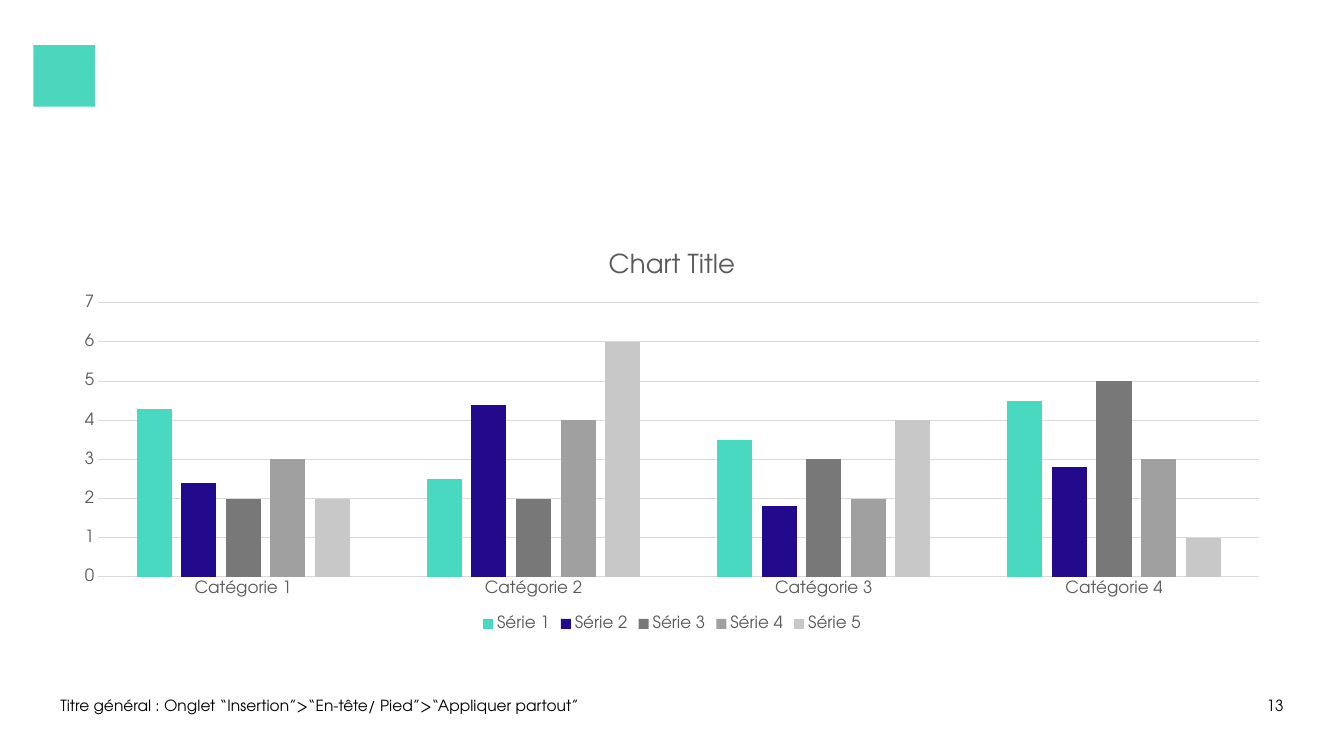
from dataclasses import dataclass

from pptx import Presentation
from pptx.chart.data import CategoryChartData
from pptx.dml.color import RGBColor
from pptx.enum.chart import XL_CHART_TYPE, XL_LEGEND_POSITION, XL_TICK_MARK
from pptx.enum.shapes import MSO_SHAPE
from pptx.enum.text import MSO_ANCHOR, PP_ALIGN
from pptx.util import Cm, Pt

COLUMNS = XL_CHART_TYPE.COLUMN_CLUSTERED
LEGEND_BOTTOM = XL_LEGEND_POSITION.BOTTOM
NO_TICK = XL_TICK_MARK.NONE
SQUARE = MSO_SHAPE.RECTANGLE
ANCHOR_BOTTOM = MSO_ANCHOR.BOTTOM
LEFT, RIGHT = PP_ALIGN.LEFT, PP_ALIGN.RIGHT


@dataclass(frozen=True)
class Theme:
    font: str = "TeX Gyre Adventor"
    text: str = "000000"
    chart_text: str = "595959"
    rule: str = "D9D9D9"
    emblem: str = "4BD7BE"
    footer_size: float = 11
    title_size: float = 18.6
    label_size: float = 12
    rule_width: float = 0.75


THEME = Theme()

CHART_TITLE = "Chart Title"
CATEGORIES = ["Catégorie 1", "Catégorie 2", "Catégorie 3", "Catégorie 4"]
SERIES = [
    ("Série 1", (4.3, 2.5, 3.5, 4.5), "49D9C0"),
    ("Série 2", (2.4, 4.4, 1.8, 2.8), "230A8C"),
    ("Série 3", (2, 2, 3, 5), "787878"),
    ("Série 4", (3, 4, 2, 3), "A0A0A0"),
    ("Série 5", (2, 6, 4, 1), "C8C8C8"),
]
FOOTER = "Titre général : Onglet “Insertion”>“En-tête/ Pied”>“Appliquer partout”"
PAGE_NUMBER = "13"

PAGE_WIDTH, PAGE_HEIGHT = 33.87, 19.05
MARGIN = 1.52
CONTENT_WIDTH = PAGE_WIDTH - 2 * MARGIN
CHART_TOP, CHART_HEIGHT = 5.89, 10.13
FOOTER_BOTTOM = 18.02
FOOTER_WIDTH, FOOTER_HEIGHT = 13.41, 1.09
NUMBER_WIDTH, NUMBER_HEIGHT = 2.01, 0.61
EMBLEM_LEFT, EMBLEM_TOP, EMBLEM_SIZE = 0.84, 1.14, 1.55


def style_font(font, size, color):
    font.name = THEME.font
    font.size = Pt(size)
    font.bold = False
    font.color.rgb = RGBColor.from_string(color)


def style_rule(line):
    line.color.rgb = RGBColor.from_string(THEME.rule)
    line.width = Pt(THEME.rule_width)


def add_footer_text(page, text, left, width, height, alignment):
    top = FOOTER_BOTTOM - height
    box = page.shapes.add_textbox(Cm(left), Cm(top), Cm(width), Cm(height))
    frame = box.text_frame
    frame.word_wrap = True
    frame.vertical_anchor = ANCHOR_BOTTOM
    frame.margin_left = frame.margin_right = 0
    frame.margin_top = frame.margin_bottom = 0
    para = frame.paragraphs[0]
    para.alignment = alignment
    span = para.add_run()
    span.text = text
    style_font(span.font, THEME.footer_size, THEME.text)


def add_emblem(page):
    emblem = page.shapes.add_shape(
        SQUARE, Cm(EMBLEM_LEFT), Cm(EMBLEM_TOP), Cm(EMBLEM_SIZE), Cm(EMBLEM_SIZE)
    )
    emblem.shadow.inherit = False
    emblem.fill.solid()
    emblem.fill.fore_color.rgb = RGBColor.from_string(THEME.emblem)
    emblem.line.fill.background()


def add_column_chart(page):
    data = CategoryChartData()
    data.categories = CATEGORIES
    for name, values, _ in SERIES:
        data.add_series(name, values)
    chart = page.shapes.add_chart(
        COLUMNS, Cm(MARGIN), Cm(CHART_TOP), Cm(CONTENT_WIDTH), Cm(CHART_HEIGHT), data
    ).chart
    style_font(chart.font, THEME.label_size, THEME.chart_text)

    chart.has_title = True
    span = chart.chart_title.text_frame.paragraphs[0].add_run()
    span.text = CHART_TITLE
    style_font(span.font, THEME.title_size, THEME.chart_text)
    chart.chart_title.include_in_layout = False

    chart.has_legend = True
    chart.legend.position = LEGEND_BOTTOM
    chart.legend.include_in_layout = False
    style_font(chart.legend.font, THEME.label_size, THEME.chart_text)

    for axis in (chart.category_axis, chart.value_axis):
        axis.major_tick_mark = axis.minor_tick_mark = NO_TICK
        style_font(axis.tick_labels.font, THEME.label_size, THEME.chart_text)
    style_rule(chart.category_axis.format.line)
    value_axis = chart.value_axis
    value_axis.minimum_scale, value_axis.maximum_scale = 0, 7
    value_axis.major_unit = 1
    value_axis.format.line.fill.background()
    style_rule(value_axis.major_gridlines.format.line)

    plot = chart.plots[0]
    plot.gap_width, plot.overlap = 219, -27
    plot.vary_by_categories = False
    for series, (_, _, color) in zip(plot.series, SERIES):
        series.format.fill.solid()
        series.format.fill.fore_color.rgb = RGBColor.from_string(color)


def main():
    deck = Presentation()
    deck.slide_width, deck.slide_height = Cm(PAGE_WIDTH), Cm(PAGE_HEIGHT)
    page = deck.slides.add_slide(deck.slide_layouts[6])
    add_emblem(page)
    add_footer_text(page, FOOTER, MARGIN, FOOTER_WIDTH, FOOTER_HEIGHT, LEFT)
    number_left = PAGE_WIDTH - MARGIN - NUMBER_WIDTH
    add_footer_text(page, PAGE_NUMBER, number_left, NUMBER_WIDTH, NUMBER_HEIGHT, RIGHT)
    add_column_chart(page)
    deck.save("out.pptx")


if __name__ == "__main__":
    main()
